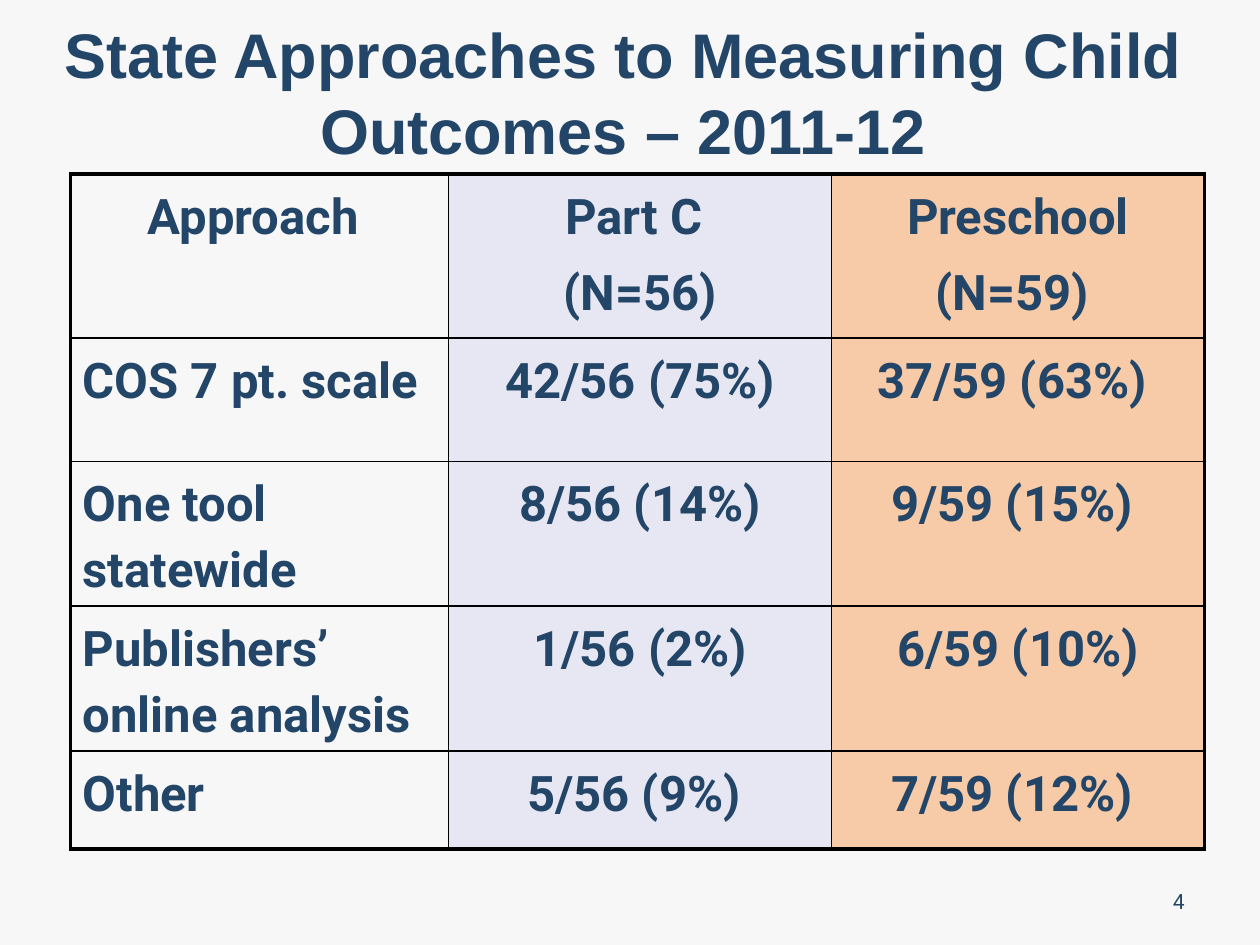
from lxml.etree import SubElement
from pptx import Presentation
from pptx.dml.color import RGBColor
from pptx.enum.text import MSO_ANCHOR, PP_ALIGN
from pptx.oxml import parse_xml
from pptx.oxml.ns import nsdecls, qn
from pptx.util import Cm, Pt

NAVY = "224568"
THIN, THICK = Pt(1), Pt(2.25)
TITLE_FONT = {"name": "Arial", "size": Pt(36), "bold": True}
TABLE_FONT = {"name": "Roboto", "size": Pt(28), "bold": True}
NUMBER_FONT = {"name": "Roboto", "size": Pt(12), "bold": False}
CELL_FORMAT = {"margin_left": Cm(0.25), "margin_right": Cm(0.25),
               "margin_top": Cm(0.13), "margin_bottom": Cm(0.13),
               "vertical_anchor": MSO_ANCHOR.TOP}
COLUMN_WIDTHS = (7.62, 7.72, 7.52)
ROW_HEIGHTS = (3.3, 2.49, 2.49, 2.49, 1.98)
COLUMN_FILLS = (None, ("CECEEF", 38), ("F79646", 45))
APPROACHES = (
    ("Approach ", "Part C \n(N=56)", "Preschool\n(N=59) "),
    ("COS 7 pt. scale", "42/56 (75%)", "37/59 (63%) "),
    ("One tool statewide", "8/56 (14%)", "9/59 (15%) "),
    ("Publishers’ online analysis", "1/56 (2%)", "6/59 (10%)"),
    ("Other", "5/56 (9%) ", "7/59 (12%) "),
)


def set_values(target, values):
    """Set every attribute in values on target."""
    for name, value in values.items():
        setattr(target, name, value)


def set_fill(fill, color, opacity=100):
    """Fill with a solid colour at an opacity in percent."""
    fill.solid()
    fill.fore_color.rgb = RGBColor.from_string(color)
    if opacity < 100:
        color_node = next(fill._xPr.iter(qn("a:srgbClr")))
        SubElement(color_node, qn("a:alpha"), val=str(opacity * 1000))


def write_text(frame, text, font, align, line_spacing=1.0, gap=0):
    """Write one formatted paragraph per line of text."""
    frame.word_wrap = True
    frame.text = text
    for index, paragraph in enumerate(frame.paragraphs):
        set_values(paragraph, {"alignment": align, "line_spacing": line_spacing,
                               "space_before": Pt(gap if index else 0)})
        for run in paragraph.runs:
            set_values(run.font, font)
            run.font.color.rgb = RGBColor.from_string(NAVY)


def set_borders(cell, widths):
    """Draw black left, right, top and bottom borders."""
    properties = cell._tc.get_or_add_tcPr()
    for index, (side, width) in enumerate(zip("LRTB", widths)):
        properties.insert(index, parse_xml(
            f'<a:ln{side} {nsdecls("a")} w="{width}"><a:solidFill>'
            f'<a:srgbClr val="000000"/></a:solidFill></a:ln{side}>'))


def place(shape, left, top, width, height):
    """Place a shape by centimetres."""
    set_values(shape, {"left": Cm(left), "top": Cm(top),
                       "width": Cm(width), "height": Cm(height)})


def add_title(slide, text):
    """Move and write the title placeholder."""
    title = slide.shapes.title
    place(title, 0.84, 0.2, 23.44, 3.28)
    title.text_frame.vertical_anchor = MSO_ANCHOR.MIDDLE
    write_text(title.text_frame, text, TITLE_FONT, PP_ALIGN.CENTER)


def add_approach_table(slide):
    """Add the table of approaches by programme."""
    table = slide.shapes.add_table(
        len(ROW_HEIGHTS), len(COLUMN_WIDTHS), Cm(1.42), Cm(3.51),
        Cm(sum(COLUMN_WIDTHS)), Cm(sum(ROW_HEIGHTS))).table
    set_values(table, {"first_row": False, "horz_banding": False})
    for column, width in zip(table.columns, COLUMN_WIDTHS):
        column.width = Cm(width)
    last_row, last_column = len(ROW_HEIGHTS) - 1, len(COLUMN_WIDTHS) - 1
    for r, (height, texts) in enumerate(zip(ROW_HEIGHTS, APPROACHES)):
        table.rows[r].height = Cm(height)
        for c, (text, tint) in enumerate(zip(texts, COLUMN_FILLS)):
            cell = table.cell(r, c)
            set_values(cell, CELL_FORMAT)
            align = PP_ALIGN.LEFT if r and not c else PP_ALIGN.CENTER
            write_text(cell.text_frame, text, TABLE_FONT, align, 1.15, 5.8)
            if tint:
                set_fill(cell.fill, *tint)
            else:
                cell.fill.background()
            outer_edges = (c == 0, c == last_column, r == 0, r == last_row)
            set_borders(cell, [THICK if outer else THIN for outer in outer_edges])


def add_slide_number(slide, number):
    """Add the slide number at the bottom right."""
    box = slide.shapes.add_textbox(Cm(18.21), Cm(17.65), Cm(5.92), Cm(1.02))
    box.text_frame.vertical_anchor = MSO_ANCHOR.MIDDLE
    write_text(box.text_frame, number, NUMBER_FONT, PP_ALIGN.RIGHT)


def main():
    """Build and save the slide."""
    deck = Presentation()
    set_values(deck, {"slide_width": Cm(25.4), "slide_height": Cm(19.05)})
    slide = deck.slides.add_slide(deck.slide_layouts[5])
    set_fill(slide.background.fill, "F7F7F7")
    add_title(slide, "State Approaches to Measuring Child Outcomes – 2011-12")
    add_approach_table(slide)
    add_slide_number(slide, "4")
    deck.save("out.pptx")


if __name__ == "__main__":
    main()
